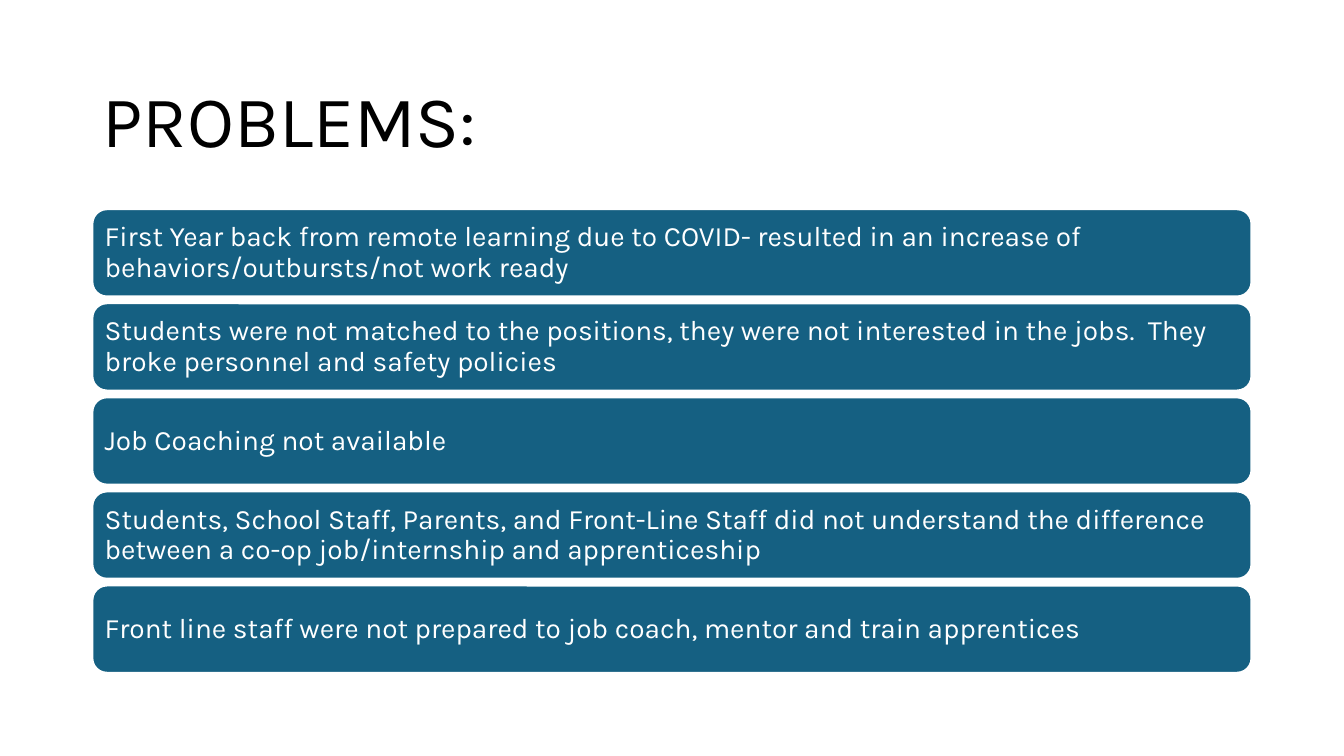
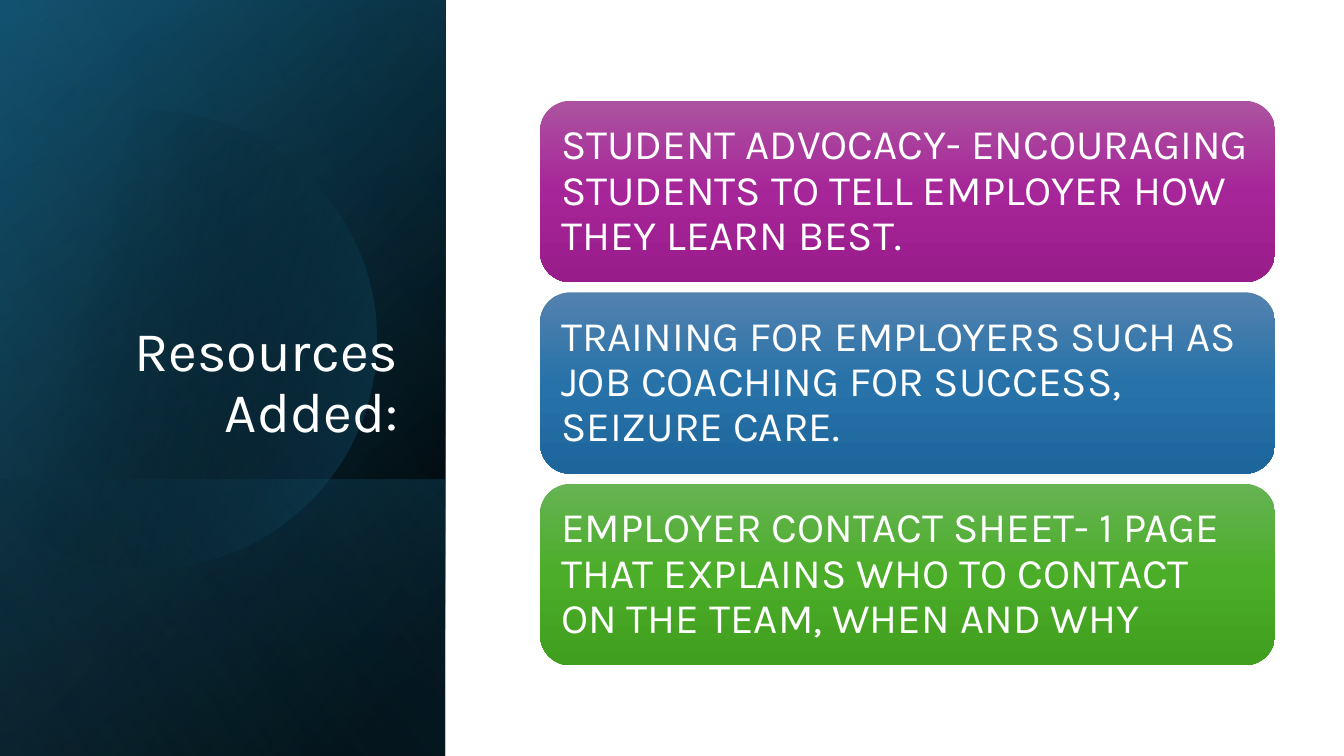
"""Build two slides: a stack of problems, and the resources added beside a dark panel."""
import math

from lxml import etree
from pptx import Presentation, util
from pptx.dml.color import RGBColor
from pptx.enum import shapes, text
from pptx.oxml import ns

COLUMNS, ROWS = 160, 90
UNIT = util.Inches(1) // 12
FONT = "Karla"
COLORS = {
    "white": "FFFFFF", "black": "000000", "teal": "156082", "deep": "104862", "sky": "46B1E1",
    "purple_top": "AC53A0", "purple": "A62598", "purple_low": "991C8B",
    "blue_top": "5382AF", "blue": "2772A9", "blue_low": "1D669C",
    "green_top": "66B354", "green": "4BAD28", "green_low": "409F1E",
}
PROBLEMS = [
    "First Year back from remote learning due to COVID- resulted in an increase of "
    "behaviors/outbursts/not work ready",
    "Students were not matched to the positions, they were not interested in the jobs.  "
    "They broke personnel and safety policies",
    "Job Coaching not available",
    "Students, School Staff, Parents, and Front-Line Staff did not understand the difference "
    "between a co-op job/internship and apprenticeship",
    "Front line staff were not prepared to job coach, mentor and train apprentices",
]
RESOURCES = {
    "purple": "STUDENT ADVOCACY- ENCOURAGING STUDENTS TO TELL EMPLOYER HOW THEY LEARN BEST.",
    "blue": "TRAINING FOR EMPLOYERS SUCH AS JOB COACHING FOR SUCCESS, SEIZURE CARE.",
    "green": "EMPLOYER CONTACT SHEET- 1 PAGE THAT EXPLAINS WHO TO CONTACT ON THE TEAM, WHEN AND WHY",
}
PANEL_WIDTH = 53
PANEL_LAYERS = [
    ([(8, "black", 100), (100, "deep", 100)], 50, 0),
    ([(0, "black", 0), (99, "teal", 46)], 30, 0),
    ([(2, "teal", 29), (100, "black", 30)], 130, 57.1),
]
PANEL_GLOW = ([(0, "black", 0), (99, "sky", 11)], 120, 0)


def grid(*lengths):
    """Turn grid columns or rows into slide lengths."""
    return [round(length * UNIT) for length in lengths]


def color(name):
    """Look up a colour by name."""
    return RGBColor.from_string(COLORS[name])


def write(box, content, size=20, ink="white", anchor="MIDDLE", align="LEFT", inset=None):
    """Put one formatted paragraph into a shape."""
    frame = box.text_frame
    frame.text = content
    frame.word_wrap = True
    frame.auto_size = text.MSO_AUTO_SIZE.NONE
    frame.vertical_anchor = text.MSO_ANCHOR[anchor]
    if inset is not None:
        frame.margin_left = frame.margin_right = util.Inches(inset)
        frame.margin_top = frame.margin_bottom = util.Inches(inset)
    para = frame.paragraphs[0]
    para.alignment = text.PP_ALIGN[align]
    para.line_spacing = 0.9
    font = para.runs[0].font
    font.name, font.size = FONT, util.Pt(size)
    font.color.rgb = color(ink)


def paint_gradient(shape, stops, angle):
    """Fill a shape with stops of position, colour and opacity."""
    shape.fill.gradient()
    fill = shape.element.spPr.find(ns.qn("a:gradFill"))
    fill.clear()
    fill.set("rotWithShape", "1")
    stop_list = etree.SubElement(fill, ns.qn("a:gsLst"))
    for position, name, opacity in stops:
        stop = etree.SubElement(stop_list, ns.qn("a:gs"), pos=str(position * 1000))
        tint = etree.SubElement(stop, ns.qn("a:srgbClr"), val=COLORS[name])
        if opacity < 100:
            etree.SubElement(tint, ns.qn("a:alpha"), val=str(opacity * 1000))
    etree.SubElement(fill, ns.qn("a:lin"), ang=str(angle * 60000), scaled="0")


def make_plain(shape):
    """Drop the shadow and outline of a new shape."""
    shape.shadow.inherit = False
    shape.line.fill.background()
    return shape


def add_title(page, content, area, **style):
    """Place the title in front of what is already on the slide."""
    title = page.shapes.title
    title.left, title.top, title.width, title.height = grid(*area)
    title.element.getparent().append(title.element)
    write(title, content, **style)


def add_cards(page, contents, area, pitch, **style):
    """Stack rounded cards at an equal pitch and return them."""
    left, top, width, height = area
    cards = []
    for index, content in enumerate(contents):
        place = grid(left, top + index * pitch, width, height)
        card = make_plain(page.shapes.add_shape(shapes.MSO_SHAPE.ROUNDED_RECTANGLE, *place))
        write(card, content, **style)
        cards.append(card)
    return cards


def add_layer(page, stops, angle, top):
    """Add a turned, mirrored gradient layer from a row down to the slide's foot."""
    height = ROWS - top
    left = (PANEL_WIDTH - height) / 2
    turned_top = top + (height - PANEL_WIDTH) / 2
    place = grid(left, turned_top, height, PANEL_WIDTH)
    layer = make_plain(page.shapes.add_shape(shapes.MSO_SHAPE.RECTANGLE, *place))
    layer.rotation = 90
    layer.element.spPr.get_or_add_xfrm().set("flipH", "1")
    paint_gradient(layer, stops, angle)


def add_disc(page, center_x, center_y, radius):
    """Add a translucent disc cut off on its left side."""
    points = [
        grid(center_x + radius * math.cos(math.radians(degree)),
             center_y + radius * math.sin(math.radians(degree)))
        for degree in range(-135, 136, 3)
    ]
    builder = page.shapes.build_freeform(*points[0], scale=1.0)
    builder.add_line_segments(points[1:], close=True)
    disc = make_plain(builder.convert_to_shape())
    paint_gradient(disc, [(29, "black", 0), (100, "teal", 43)], 14)


def build_problems(page):
    """Fill the slide that lists the problems."""
    add_title(page, "PROBLEMS:", (11, 7.3, 138, 14.9), size=52, ink="black")
    for card in add_cards(page, PROBLEMS, (11, 24.9, 138, 10.4), 11.2, inset=0.08):
        card.fill.solid()
        card.fill.fore_color.rgb = color("teal")
        card.line.color.rgb = color("white")
        card.line.width = util.Pt(1.5)


def build_resources(page):
    """Fill the slide that shows the resources beside the panel."""
    for layer in PANEL_LAYERS:
        add_layer(page, *layer)
    add_disc(page, 17.5, 40.4, 27.3)
    add_layer(page, *PANEL_GLOW)
    add_title(page, "Resources Added:", (7.7, 22.1, 40.9, 31.4),
              size=40, anchor="BOTTOM", align="RIGHT")
    cards = add_cards(page, RESOURCES.values(), (64.3, 12, 87.5, 21.6), 22.8, size=30, inset=0.12)
    for card, name in zip(cards, RESOURCES):
        stops = [(0, name + "_top", 100), (50, name, 100), (100, name + "_low", 100)]
        paint_gradient(card, stops, 90)


def main():
    """Build and save the deck."""
    deck = Presentation()
    deck.slide_width, deck.slide_height = grid(COLUMNS, ROWS)
    title_only = deck.slide_layouts.get_by_name("Title Only")
    for build in (build_problems, build_resources):
        build(deck.slides.add_slide(title_only))
    deck.save("out.pptx")


if __name__ == "__main__":
    main()
